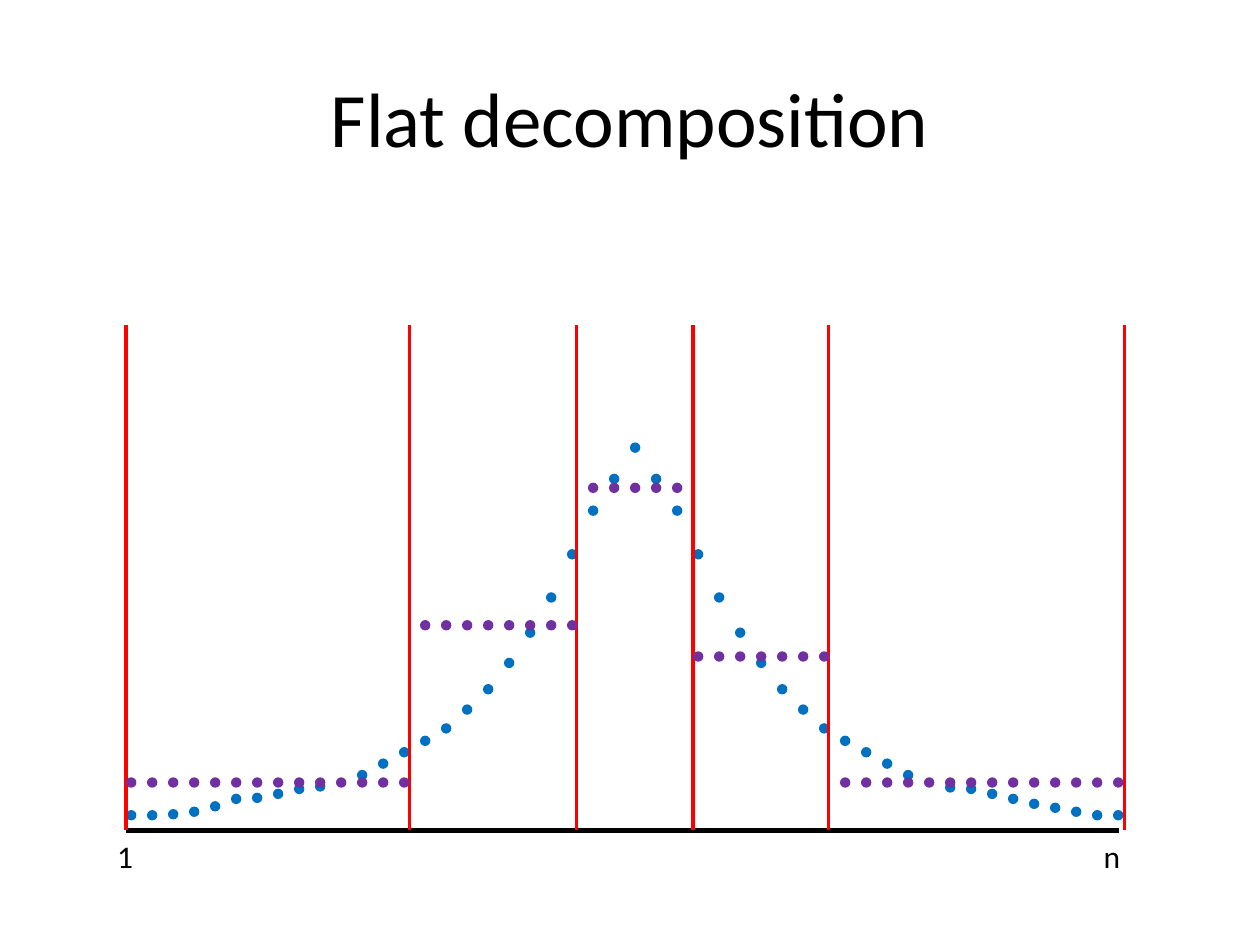
import pptx
import pptx.dml.color
import pptx.enum.shapes
import pptx.enum.text
import pptx.oxml.ns
import pptx.util
from lxml import etree

Cm = pptx.util.Cm
Pt = pptx.util.Pt
RGBColor = pptx.dml.color.RGBColor
Align = pptx.enum.text.PP_ALIGN
Anchor = pptx.enum.text.MSO_ANCHOR

BLACK = RGBColor(0x00, 0x00, 0x00)
RED = RGBColor(0xFF, 0x00, 0x00)
BLUE = RGBColor(0x00, 0x70, 0xC0)
PURPLE = RGBColor(0x70, 0x30, 0xA0)

# All lengths are in centimetres.
LEFT = 2.54
STEP = 2.54 / 6
DOT = 0.21
AXIS_RIGHT = 22.56
AXIS_Y = 16.74
BORDER_TOP = 6.55

# Tops of the dots, one per column; None leaves the column empty.
LEFT_TAIL = [16.33, 16.33, 16.31, 16.26, 16.15, 16, 15.98, 15.9, 15.8, 15.75, None]
SLOPE = [15.52, 15.29, 15.06, 14.83, 14.58, 14.2, 13.79,
         13.26, 12.65, 11.94, 11.07, 10.19, 9.55]
PEAK = 8.92
RIGHT_TAIL = [None, 15.77, 15.8, 15.9, 16, 16.1, 16.18, 16.26, 16.33, 16.33]
CURVE = LEFT_TAIL + SLOPE + [PEAK] + SLOPE[::-1] + RIGHT_TAIL

# Number of columns and top of the dots in each interval.
INTERVALS = [(14, 15.67), (8, 12.5), (5, 9.73), (7, 13.13), (14, 15.67)]
FLAT = [top for count, top in INTERVALS for _ in range(count)]
BORDERS = [LEFT, 8.26, 11.63, 13.97, 16.71, 22.66]


def write(frame, text, *, size, color=BLACK, font="Calibri",
          align=Align.LEFT, anchor=Anchor.TOP):
    frame.word_wrap = True
    frame.vertical_anchor = anchor
    para = frame.paragraphs[0]
    para.alignment = align
    span = para.add_run()
    span.text = text
    span.font.name = font
    span.font.size = Pt(size)
    span.font.color.rgb = color


class Page:
    """The current slide and the style of its elements."""

    title_size = 44
    label_size = 18

    def __init__(self, deck):
        self.slide = deck.slides.add_slide(deck.slide_layouts[5])
        self.shapes = self.slide.shapes

    def title(self, text, left, top, width, height):
        box = self.shapes.title
        box.left, box.top = Cm(left), Cm(top)
        box.width, box.height = Cm(width), Cm(height)
        write(box.text_frame, text, size=self.title_size,
              align=Align.CENTER, anchor=Anchor.MIDDLE)

    def label(self, text, left, top):
        box = self.shapes.add_textbox(Cm(left), Cm(top), Cm(1.9), Cm(1.02))
        write(box.text_frame, text, size=self.label_size)

    def line(self, start, end, color, width):
        line = self.shapes.add_connector(
            pptx.enum.shapes.MSO_CONNECTOR.STRAIGHT,
            Cm(start[0]), Cm(start[1]), Cm(end[0]), Cm(end[1]))
        line.line.color.rgb = color
        line.line.width = Pt(width)
        etree.SubElement(line._element.spPr, pptx.oxml.ns.qn("a:effectLst"))

    def dots(self, tops, color):
        """Draw one dot per column, skipping the empty columns."""
        for column, top in enumerate(tops):
            if top is None:
                continue
            dot = self.shapes.add_shape(
                pptx.enum.shapes.MSO_SHAPE.OVAL,
                Cm(LEFT + column * STEP), Cm(top), Cm(DOT), Cm(DOT))
            dot.shadow.inherit = False
            dot.fill.solid()
            dot.fill.fore_color.rgb = color
            dot.line.fill.background()


def main():
    deck = pptx.Presentation()
    deck.slide_width, deck.slide_height = Cm(25.4), Cm(19.05)
    page = Page(deck)
    page.title("Flat decomposition", 1.27, 0.76, 22.86, 3.18)
    page.line((LEFT, AXIS_Y), (AXIS_RIGHT, AXIS_Y), BLACK, 2.75)
    page.dots(CURVE, BLUE)
    page.label("1", 2.11, AXIS_Y)
    page.label("n", 22, AXIS_Y)
    for x in BORDERS:
        page.line((x, BORDER_TOP), (x, AXIS_Y), RED, 1.75)
    page.dots(FLAT, PURPLE)
    deck.save("out.pptx")


if __name__ == "__main__":
    main()
